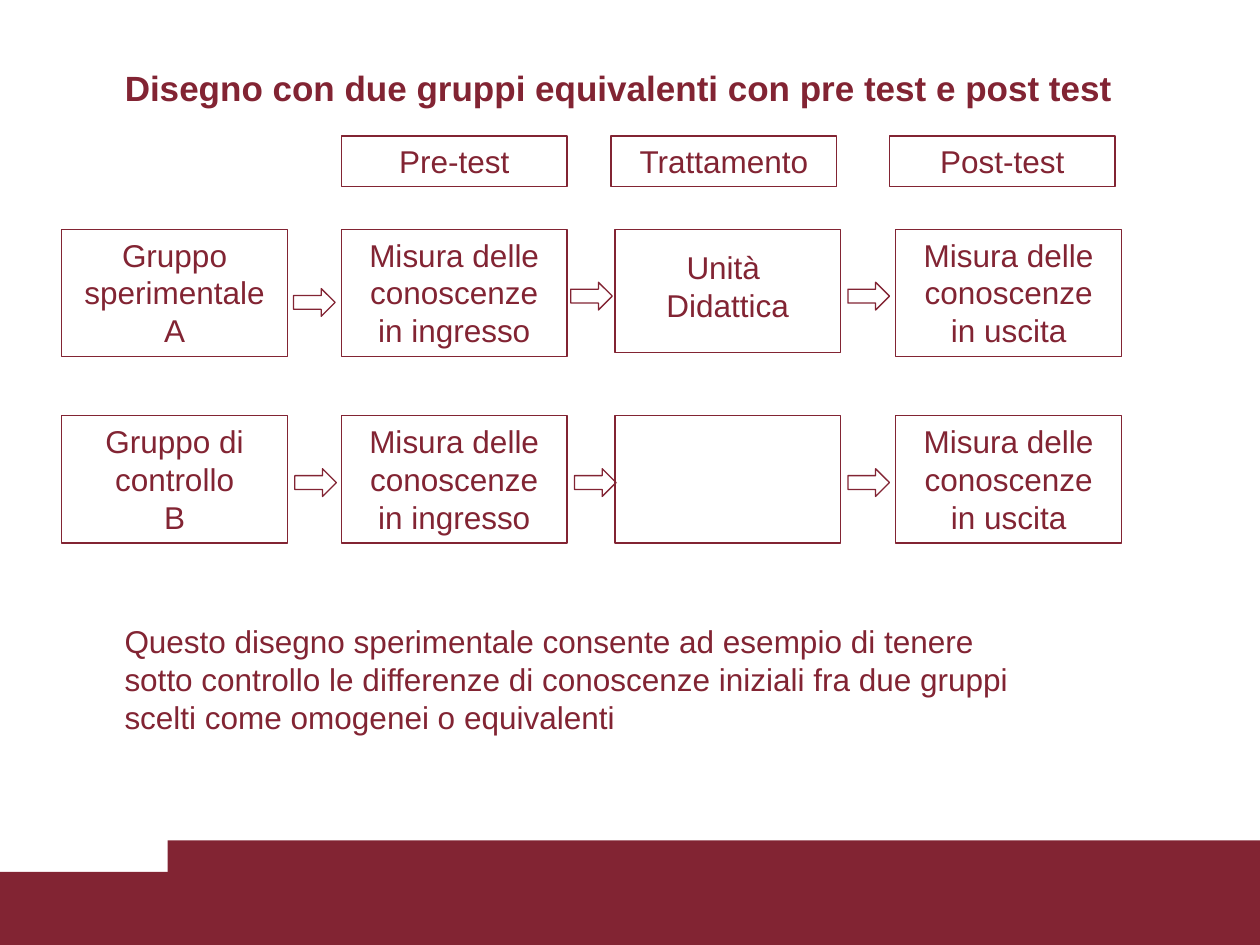
"""Slide on a two-group experimental design with pre-test and post-test."""
from dataclasses import dataclass

from pptx import Presentation
from pptx.dml.color import RGBColor
from pptx.enum.shapes import MSO_SHAPE
from pptx.enum.text import MSO_ANCHOR, MSO_AUTO_SIZE, PP_ALIGN
from pptx.util import Inches, Pt

RECTANGLE, RIGHT_ARROW = MSO_SHAPE.RECTANGLE, MSO_SHAPE.RIGHT_ARROW
TOP = MSO_ANCHOR.TOP
FIT_SHAPE, NO_FIT = MSO_AUTO_SIZE.SHAPE_TO_FIT_TEXT, MSO_AUTO_SIZE.NONE
LEFT, CENTER = PP_ALIGN.LEFT, PP_ALIGN.CENTER
TITLE_ONLY = 5


@dataclass(frozen=True)
class Theme:
    """Colours, font and type sizes of the slide."""
    accent: RGBColor = RGBColor(0x82, 0x24, 0x33)
    font: str = "Arial"
    title_size: Pt = Pt(20)
    body_size: Pt = Pt(18)
    line_width: Pt = Pt(0.75)


def assign(target, values):
    """Set each attribute named in values on target."""
    for name, value in values.items():
        setattr(target, name, value)


class SlideBuilder:
    """Draws the elements of one slide in a common style."""

    def __init__(self, slide, theme):
        """Keep the slide and the theme."""
        self.slide = slide
        self.theme = theme

    def set_text(self, frame, text, size, align, bold=False, top=0.05, fit=FIT_SHAPE):
        """Fill a text frame, one paragraph per line of text."""
        assign(frame, {"word_wrap": True, "auto_size": fit, "vertical_anchor": TOP,
                       "margin_left": Inches(0.1), "margin_right": Inches(0.1),
                       "margin_top": Inches(top), "margin_bottom": Inches(0.05)})
        frame.text = text
        for paragraph in frame.paragraphs:
            paragraph.alignment = align
            assign(paragraph.font, {"name": self.theme.font, "size": size, "bold": bold})
            paragraph.font.color.rgb = self.theme.accent

    def title(self, text, *bounds):
        """Place and format the title."""
        heading = self.slide.shapes.title
        assign(heading, dict(zip(("left", "top", "width", "height"), map(Inches, bounds))))
        self.set_text(heading.text_frame, text, self.theme.title_size, LEFT,
                      bold=True, top=0.08, fit=NO_FIT)

    def band(self, *bounds):
        """Draw a solid footer band."""
        band = self.slide.shapes.add_shape(RECTANGLE, *map(Inches, bounds))
        band.shadow.inherit = False
        band.fill.solid()
        band.fill.fore_color.rgb = self.theme.accent
        band.line.fill.background()

    def outline(self, kind, *bounds):
        """Draw an unfilled shape with a thin border."""
        shape = self.slide.shapes.add_shape(kind, *map(Inches, bounds))
        shape.shadow.inherit = False
        shape.fill.background()
        shape.line.color.rgb = self.theme.accent
        shape.line.width = self.theme.line_width
        return shape

    def box(self, text, left, top, height, inset=0.05):
        """Draw a bordered box of the design, with text if there is any."""
        box = self.outline(RECTANGLE, left, top, 1.79, height)
        if text:
            self.set_text(box.text_frame, text, self.theme.body_size, CENTER, top=inset)

    def arrow(self, left, top):
        """Draw a block arrow between two boxes."""
        self.outline(RIGHT_ARROW, left, top, 0.33, 0.22)

    def note(self, text, *bounds):
        """Add a left-aligned text block."""
        note = self.slide.shapes.add_textbox(*map(Inches, bounds))
        self.set_text(note.text_frame, text, self.theme.body_size, LEFT)


def main():
    """Build and save the slide."""
    deck = Presentation()
    deck.slide_width, deck.slide_height = Inches(10), Inches(7.5)
    design = SlideBuilder(deck.slides.add_slide(deck.slide_layouts[TITLE_ONLY]), Theme())

    design.band(0, 6.92, 10, 0.58)
    design.band(1.33, 6.67, 8.67, 0.83)
    design.title("Disegno con due gruppi equivalenti con pre test e post test",
                 0.89, 0.45, 8.27, 0.35)

    for phase, left in (("Pre-test", 2.71), ("Trattamento", 4.85), ("Post-test", 7.06)):
        design.box(phase, left, 1.08, 0.4)

    entry_measure = "Misura delle conoscenze in ingresso"
    exit_measure = "Misura delle conoscenze in uscita"
    group_column, entry_column, treatment_column, exit_column = 0.49, 2.71, 4.88, 7.11
    experimental_row, control_row, row_height = 1.82, 3.3, 1.01
    groups = (("Gruppo sperimentale A", experimental_row),
              ("Gruppo di controllo\nB", control_row))
    for group, top in groups:
        for text, left in ((group, group_column), (entry_measure, entry_column),
                           (exit_measure, exit_column)):
            design.box(text, left, top, row_height)
    design.box("Unità \nDidattica", treatment_column, experimental_row, 0.98, inset=0.15)
    design.box("", treatment_column, control_row, row_height)

    for left, top in ((2.33, 2.29), (4.53, 2.24), (6.73, 2.24),
                      (2.34, 3.72), (4.56, 3.72), (6.73, 3.72)):
        design.arrow(left, top)

    design.note("Questo disegno sperimentale consente ad esempio di tenere sotto controllo "
                "le differenze di conoscenze iniziali fra due gruppi scelti come omogenei "
                "o equivalenti", 0.89, 4.89, 7.4, 1.01)
    deck.save("out.pptx")


if __name__ == "__main__":
    main()
